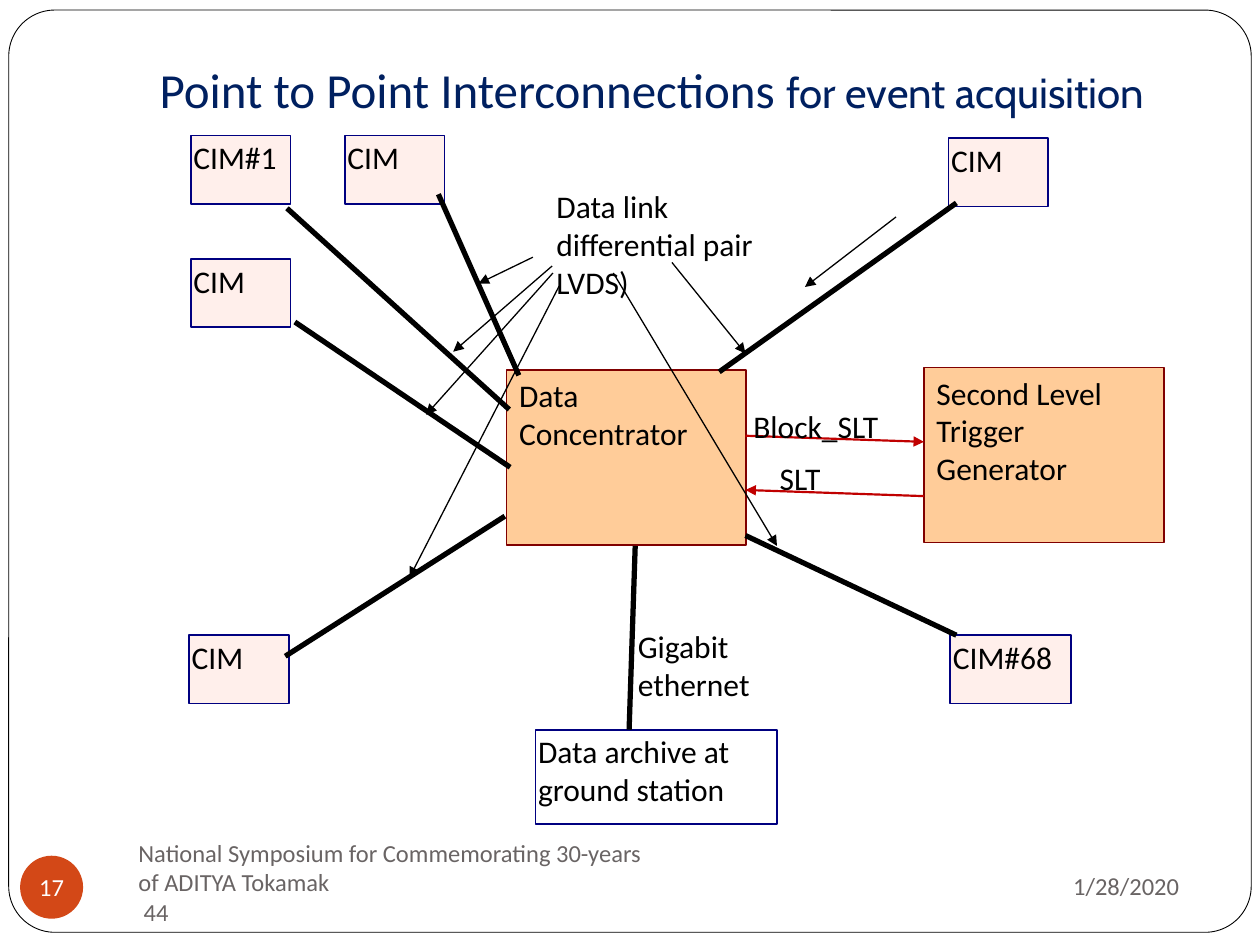
"""Build the slide on point to point interconnections for event acquisition."""
from dataclasses import dataclass
from lxml.etree import SubElement
from pptx import Presentation
from pptx.dml.color import RGBColor
from pptx.enum.shapes import MSO_CONNECTOR, MSO_SHAPE
from pptx.enum.text import MSO_ANCHOR, MSO_AUTO_SIZE, PP_ALIGN
from pptx.oxml.ns import qn
from pptx.util import Pt


@dataclass(frozen=True)
class Theme:
    ink: str = "000000"
    navy: str = "002060"
    edge: str = "000080"
    pink: str = "FFEFEB"
    peach: str = "FFCC99"
    maroon: str = "800000"
    red: str = "C00000"
    gray: str = "696464"
    badge: str = "D34817"
    white: str = "FFFFFF"
    font: str = "Calibri"
    accent: str = "Cabin"
    title: int = 28
    sub: int = 24
    body: int = 18
    small: int = 14


theme = Theme()


def write(frame, lines, inset=1.5, size=theme.body, color=theme.ink,
          align=PP_ALIGN.LEFT, anchor=MSO_ANCHOR.TOP, wrap=True):
    sides = inset if isinstance(inset, tuple) else (inset, inset)
    form = {"word_wrap": wrap, "vertical_anchor": anchor,
            "auto_size": MSO_AUTO_SIZE.NONE,
            "margin_left": Pt(sides[0]), "margin_right": Pt(sides[0]),
            "margin_top": Pt(sides[1]), "margin_bottom": Pt(sides[1])}
    for name, value in form.items():
        setattr(frame, name, value)
    frame.text = "\n".join(lines)
    for para in frame.paragraphs:
        para.alignment = align
        for run in para.runs:
            for name, value in {"name": theme.font, "size": Pt(size)}.items():
                setattr(run.font, name, value)
            run.font.color.rgb = RGBColor.from_string(color)


def draw(kind, place, fill=None, edge=None, width=1):
    shape = slide.shapes.add_shape(kind, *map(Pt, place))
    shape.shadow.inherit = False
    if fill:
        shape.fill.solid()
        shape.fill.fore_color.rgb = RGBColor.from_string(fill)
    else:
        shape.fill.background()
    if edge:
        shape.line.color.rgb = RGBColor.from_string(edge)
        shape.line.width = Pt(width)
    else:
        shape.line.fill.background()
    return shape


deck = Presentation()
deck.slide_width, deck.slide_height = Pt(720), Pt(540)
slide = deck.slides.add_slide(deck.slide_layouts[5])
wide = (7.2, 3.6)

border = draw(MSO_SHAPE.ROUNDED_RECTANGLE, (5, 5.75, 710, 527), None, theme.ink, 0.5)
border.adjustments[0] = 0.05

title = slide.shapes.title
spot = {"left": 84, "top": 30.25, "width": 612, "height": 41}
for name, value in spot.items():
    setattr(title, name, Pt(value))
write(title.text_frame, ["Point to Point Interconnections "], wide, theme.title, theme.navy)
tail = title.text_frame.paragraphs[0].add_run()
tail.text = "for event acquisition"
for name, value in {"name": theme.accent, "size": Pt(theme.sub)}.items():
    setattr(tail.font, name, value)
tail.font.color.rgb = RGBColor.from_string(theme.navy)

modules = [("CIM#1", 109, 77.5, 57), ("CIM", 197, 77.5, 57), ("CIM", 542, 79, 57),
           ("CIM", 109, 148, 57), ("CIM", 108, 363, 57), ("CIM#68", 543, 363, 69)]
for text, left, top, width in modules:
    box = draw(MSO_SHAPE.RECTANGLE, (left, top, width, 39), theme.pink, theme.edge)
    write(box.text_frame, [text])

units = [("Data Concentrator", 289.5, 211.5), ("Second Level Trigger Generator", 528, 210)]
for text, left, top in units:
    box = draw(MSO_SHAPE.RECTANGLE, (left, top, 137, 100), theme.peach, theme.maroon)
    write(box.text_frame, [text], wide)

store = draw(MSO_SHAPE.RECTANGLE, (306, 417, 138, 54), None, theme.edge)
write(store.text_frame, ["Data archive at ground station"])

cables = [(250.5, 111, 296.5, 214.5), (164, 119, 291, 234), (168.5, 184, 291.5, 267),
          (163, 375, 288.5, 295), (546.5, 116, 411, 212.5), (546.5, 363, 426, 306),
          (359.5, 417, 363, 312)]
hints = [(304.5, 147, 273.5, 162), (315.5, 152, 259, 201), (316, 156, 243.5, 237),
         (319.5, 163.5, 234, 330), (384, 150, 426, 202), (350.5, 156, 444, 312),
         (512, 124, 460, 164)]
signals = [(426, 249, 528, 252.5), (528, 283.5, 426, 280)]
groups = [(cables, theme.ink, 3, False), (hints, theme.ink, 0.75, True),
          (signals, theme.red, 1.25, True)]
for links, color, width, arrow in groups:
    for ends in links:
        link = slide.shapes.add_connector(MSO_CONNECTOR.STRAIGHT, *map(Pt, ends))
        link.line.color.rgb = RGBColor.from_string(color)
        link.line.width = Pt(width)
        if arrow:
            SubElement(link.line._get_or_add_ln(), qn("a:tailEnd"), type="triangle")
        SubElement(link._element.spPr, qn("a:effectLst"))

footer = {"size": theme.small, "color": theme.gray, "anchor": MSO_ANCHOR.MIDDLE,
          "inset": wide}
event = ["National Symposium for Commemorating 30-years of ADITYA Tokamak", "44"]
labels = [(["Data link", "differential pair LVDS)"], (318, 107, 132.5, 63), {"inset": 0}),
          (["Gigabit ethernet"], (363, 357, 114, 54), {}),
          (["SLT"], (444, 260.5, 48, 21), {}),
          (["Block_SLT"], (429, 231, 96, 21), {}),
          (["1/28/2020"], (486, 487.5, 195, 37.5), {**footer, "align": PP_ALIGN.RIGHT}),
          (event, (72, 486, 312, 36), footer)]
for lines, place, form in labels:
    label = slide.shapes.add_textbox(*map(Pt, place))
    write(label.text_frame, lines, **form)
label.text_frame.paragraphs[1]._p.get_or_add_pPr().set("marL", str(Pt(3)))

badge = draw(MSO_SHAPE.OVAL, (11.5, 489, 36, 36), theme.badge)
write(badge.text_frame, ["17"], 0, theme.small, theme.white,
      PP_ALIGN.CENTER, MSO_ANCHOR.MIDDLE, False)

deck.save("out.pptx")
